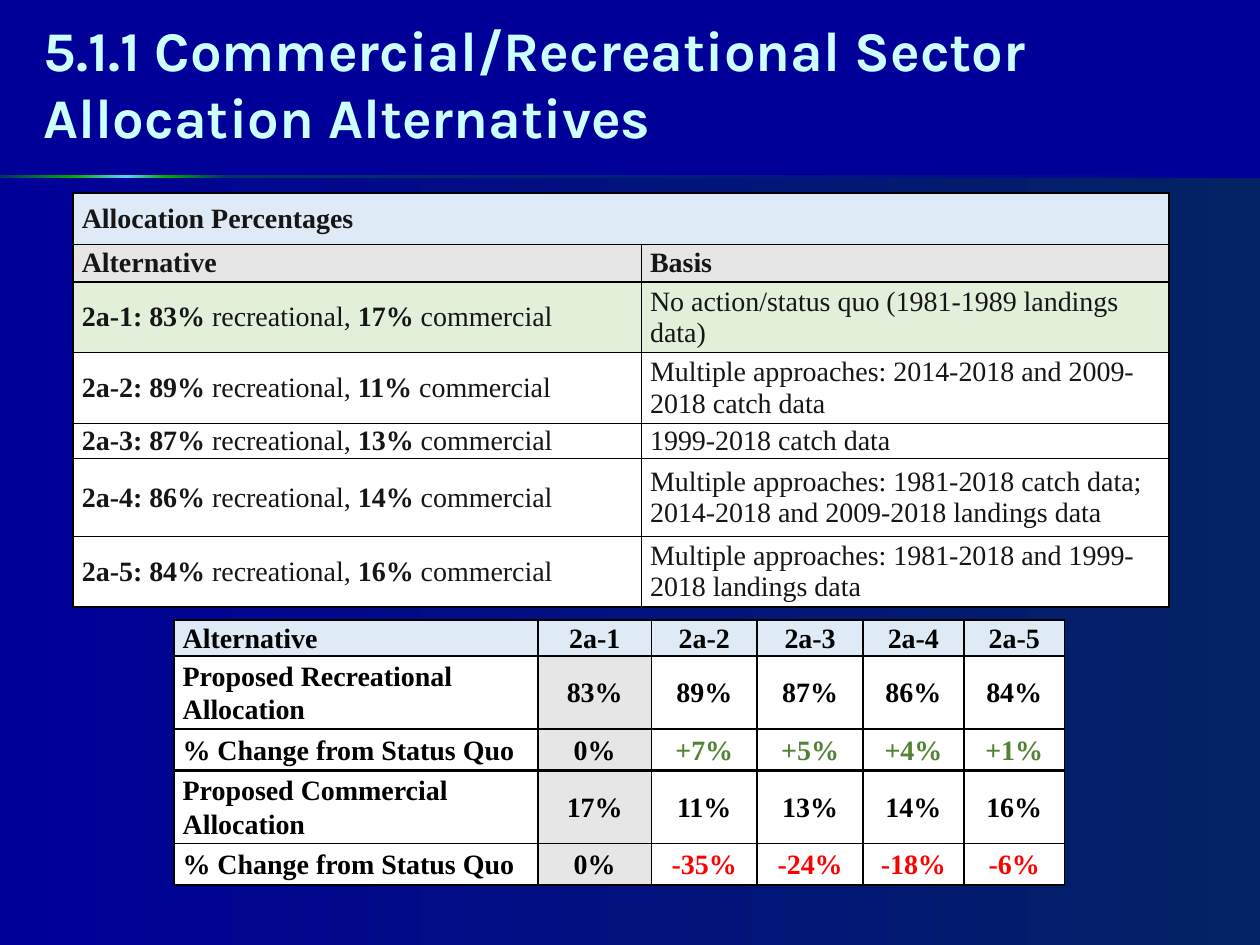
from itertools import pairwise

from lxml import etree
from pptx import Presentation
from pptx import util as u
from pptx.dml.color import RGBColor
from pptx.enum import shapes, text
from pptx.oxml.ns import qn

WIDTH, HEIGHT = 10, 7.5
BLACK, WHITE, GREY, BLUE, GREEN = "000000", "FFFFFF", "E7E6E6", "DEEAF6", "E2EFD9"
NAVY, SLATE, LIME, SKY = "000099", "003366", "00B000", "66CCFF"
BODY_FONT = "Times New Roman"

ALTERNATIVES = [
    ("2a-1", 83, 17, "No action/status quo (1981-1989 landings data)"),
    ("2a-2", 89, 11, "Multiple approaches: 2014-2018 and 2009-2018 catch data"),
    ("2a-3", 87, 13, "1999-2018 catch data"),
    ("2a-4", 86, 14, "Multiple approaches: 1981-2018 catch data; "
                     "2014-2018 and 2009-2018 landings data"),
    ("2a-5", 84, 16, "Multiple approaches: 1981-2018 and 1999-2018 landings data"),
]
RECREATIONAL_CHANGE = ["0%", "+7%", "+5%", "+4%", "+1%"]
COMMERCIAL_CHANGE = ["0%", "-35%", "-24%", "-18%", "-6%"]


def color(value):
    """Turn a hex string into a colour."""
    return RGBColor.from_string(value)


def inches(box):
    """Turn a box of numbers into lengths."""
    return [u.Inches(value) for value in box]


def add_gradient(slide, box, start, end):
    """Add a rectangle that fades from left to right."""
    shape = slide.shapes.add_shape(shapes.MSO_SHAPE.RECTANGLE, *inches(box))
    shape.shadow.inherit = False
    shape.line.fill.background()
    shape.fill.gradient()
    shape.fill.gradient_angle = 0
    for stop, value in zip(shape.fill.gradient_stops, (start, end)):
        stop.color.rgb = color(value)


def add_backdrop(slide, box):
    """Add the lower panel with the glowing rule along its top."""
    left, top, width, height = box
    rule = 0.02
    add_gradient(slide, (left, top + rule, width, height - rule), NAVY, "032363")
    glow = [(0, SLATE), (0.06, LIME), (0.1, SKY), (0.13, LIME), (0.18, SLATE), (1, NAVY)]
    for (start, first), (end, last) in pairwise(glow):
        strip = (left + start * width, top, (end - start) * width, rule)
        add_gradient(slide, strip, first, last)


def add_title(slide, box, wording):
    """Add the slide title, resting on the bottom of its box."""
    frame = slide.shapes.add_textbox(*inches(box)).text_frame
    frame.word_wrap = True
    frame.vertical_anchor = text.MSO_ANCHOR.BOTTOM
    paragraph = frame.paragraphs[0]
    paragraph.text = wording
    font = paragraph.font
    font.name, font.size, font.bold = "Karla", u.Pt(32), True
    font.color.rgb = color("CCFFFF")


def set_borders(cell, top=1, bottom=1):
    """Draw black lines on the four sides of a cell."""
    properties = cell._tc.get_or_add_tcPr()
    for side, points in zip("LRTB", (1, 1, top, bottom)):
        line = etree.SubElement(properties, qn(f"a:ln{side}"), w=str(u.Pt(points)))
        fill = etree.SubElement(line, qn("a:solidFill"))
        etree.SubElement(fill, qn("a:srgbClr"), val=BLACK)


def fill_cell(cell, wording, fill, ink=BLACK, bold=True, align=None, spacing=None):
    """Write a cell, where ** switches the weight of the text."""
    cell.fill.solid()
    cell.fill.fore_color.rgb = color(fill)
    cell.vertical_anchor = text.MSO_ANCHOR.MIDDLE
    cell.margin_left = cell.margin_right = u.Inches(0.07)
    cell.margin_top = cell.margin_bottom = 0
    paragraph = cell.text_frame.paragraphs[0]
    paragraph.alignment, paragraph.line_spacing = align, spacing
    font = paragraph.font
    font.name, font.size, font.bold = BODY_FONT, u.Pt(16), bold
    font.color.rgb = color(ink)
    parts = wording.split("**")
    for index, part in enumerate(parts):
        run = paragraph.add_run()
        run.text = part
        if len(parts) > 1:
            run.font.bold = bold == (index % 2 == 0)


def add_grid(slide, box, columns, rows):
    """Add a plain table with the given column widths and row heights."""
    table = slide.shapes.add_table(len(rows), len(columns), *inches(box)).table
    table.first_row = table.horz_banding = False
    for column, width in zip(table.columns, columns):
        column.width = u.Inches(width)
    for row, height in zip(table.rows, rows):
        row.height = u.Inches(height)
    return table


def add_basis_table(slide, box):
    """Add the table of alternatives and what they rest on."""
    table = add_grid(slide, box, [4.51, 4.19], [0.41, 0.3, 0.56, 0.56, 0.28, 0.62, 0.56])
    for cell in table.iter_cells():
        set_borders(cell)
    ink, justify = "161616", text.PP_ALIGN.JUSTIFY
    table.cell(0, 0).merge(table.cell(0, 1))
    fill_cell(table.cell(0, 0), "Allocation Percentages", BLUE, ink, align=justify)
    for column, heading in enumerate(("Alternative", "Basis")):
        fill_cell(table.cell(1, column), heading, GREY, ink, align=justify)
    for row, (name, recreational, commercial, basis) in enumerate(ALTERNATIVES, 2):
        fill = GREEN if row == 2 else WHITE
        share = f"{name}: {recreational}% **recreational, **{commercial}%** commercial"
        fill_cell(table.cell(row, 0), share, fill, ink)
        fill_cell(table.cell(row, 1), basis, fill, ink, bold=False)


def add_change_table(slide, box):
    """Add the table of allocations and their change from the status quo."""
    names, recreational, commercial, _ = zip(*ALTERNATIVES)
    change = "% Change from Status Quo"
    lines = [
        ("Alternative", names, BLACK),
        ("Proposed Recreational Allocation", [f"{v}%" for v in recreational], BLACK),
        (change, RECREATIONAL_CHANGE, "548235"),
        ("Proposed Commercial Allocation", [f"{v}%" for v in commercial], BLACK),
        (change, COMMERCIAL_CHANGE, "FF0000"),
    ]
    table = add_grid(slide, box, [2.89, 0.9, 0.84, 0.84, 0.8, 0.8],
                     [0.28, 0.58, 0.33, 0.58, 0.33])
    for row, (label, values, accent) in enumerate(lines):
        for column, wording in enumerate((label, *values)):
            cell = table.cell(row, column)
            set_borders(cell, 1.5 if row == 3 else 1, 1.5 if row == 2 else 1)
            fill = BLUE if row == 0 else GREY if column == 1 else WHITE
            ink = accent if column > 1 else BLACK
            align = text.PP_ALIGN.CENTER if column else None
            fill_cell(cell, wording, fill, ink, align=align, spacing=1.07)


def main():
    """Build the slide and save it."""
    presentation = Presentation()
    presentation.slide_width, presentation.slide_height = inches((WIDTH, HEIGHT))
    slide = presentation.slides.add_slide(presentation.slide_layouts[6])
    slide.background.fill.solid()
    slide.background.fill.fore_color.rgb = color(NAVY)
    add_backdrop(slide, (0, 1.39, WIDTH, HEIGHT - 1.39))
    add_title(slide, (0.25, 0.14, 9.5, 1.1),
              "5.1.1 Commercial/Recreational Sector Allocation Alternatives")
    add_basis_table(slide, (0.58, 1.53, 8.7, 3.27))
    add_change_table(slide, (1.38, 4.92, 7.08, 2.11))
    presentation.save("out.pptx")


if __name__ == "__main__":
    main()
